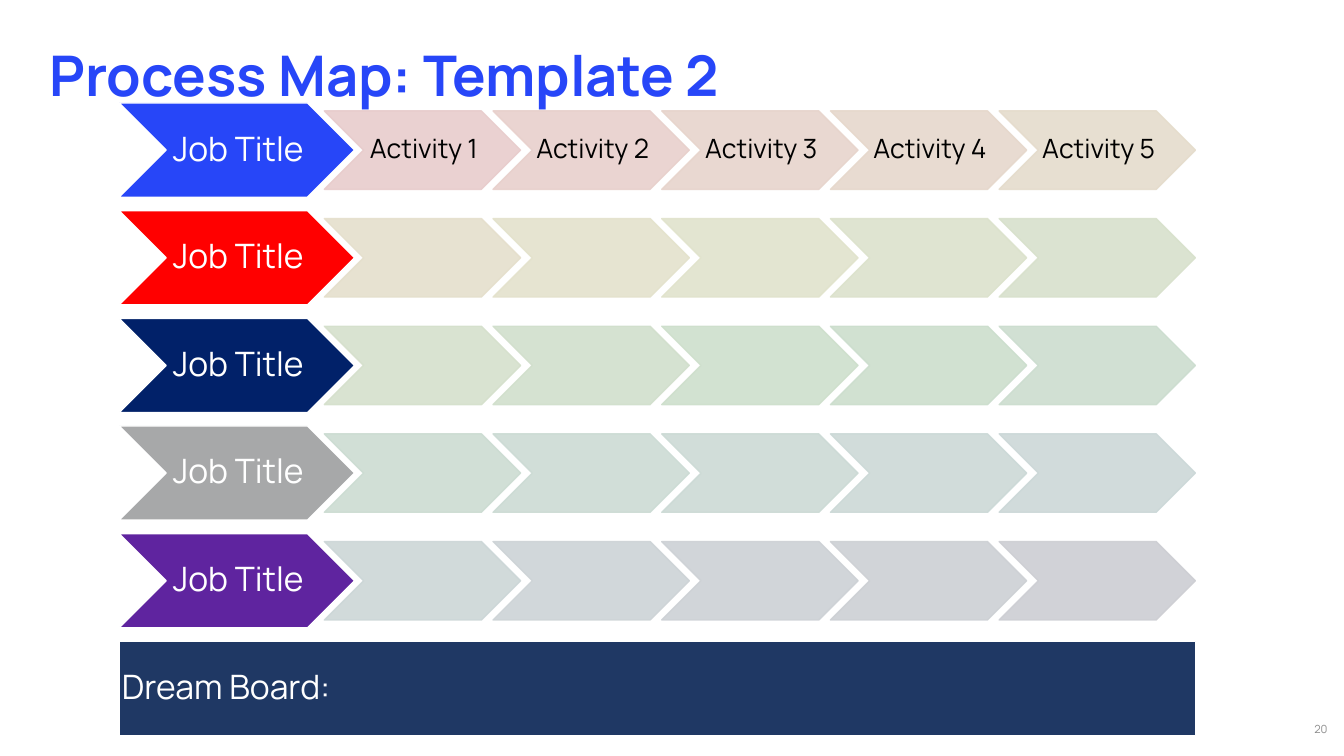
from dataclasses import dataclass
from typing import Optional

from lxml import etree
from pptx import Presentation
from pptx.dml.color import RGBColor
from pptx.enum.shapes import MSO_SHAPE
from pptx.enum.text import MSO_ANCHOR, MSO_AUTO_SIZE, PP_ALIGN
from pptx.oxml.ns import qn
from pptx.util import Pt

CHEVRON, RECTANGLE = MSO_SHAPE.CHEVRON, MSO_SHAPE.RECTANGLE
TOP, MIDDLE = MSO_ANCHOR.TOP, MSO_ANCHOR.MIDDLE
LEFT, CENTER, RIGHT = PP_ALIGN.LEFT, PP_ALIGN.CENTER, PP_ALIGN.RIGHT
NO_AUTO_SIZE = MSO_AUTO_SIZE.NONE
TITLE_ONLY = 5


@dataclass(frozen=True)
class Theme:
    font: str = "Manrope"
    title: str = "2746F8"
    white: str = "FFFFFF"
    black: str = "000000"
    board: str = "1F3864"
    page_number: str = "8C8C8C"
    title_size: float = 40
    job_size: float = 24
    activity_size: float = 19
    page_number_size: float = 8
    activity_opacity: int = 90


@dataclass(frozen=True)
class Box:
    left: float
    top: float
    width: float
    height: float

    def lengths(self) -> tuple:
        return Pt(self.left), Pt(self.top), Pt(self.width), Pt(self.height)


@dataclass(frozen=True)
class Lane:
    job_color: str
    activity_colors: tuple
    activities: tuple = ()


THEME = Theme()
LANES = (
    Lane("2746F8", ("E8CCCC", "E8D0CC", "E7D4CC", "E6D8CC", "E5DCCC"),
         tuple(f"Activity {number}" for number in range(1, 6))),
    Lane("FF0000", ("E5DFCC", "E4E2CC", "E1E3CC", "DCE2CC", "D8E1CC")),
    Lane("012169", ("D5E0CC", "D1DFCC", "CEDFCC", "CCDECD", "CCDDCF")),
    Lane("A7A8A9", ("CCDCD2", "CCDBD4", "CCDAD5", "CCD9D7", "CCD8D8")),
    Lane("5F249F", ("CCD6D7", "CDD3D6", "CDD1D5", "CDD0D4", "CDCED3")),
)

# Layout grid
GRID_LEFT, GRID_TOP, LANE_PITCH = 85, 73.6, 76.9
JOB_WIDTH, JOB_HEIGHT = 168.3, 67.3
ACTIVITY_LEFT, ACTIVITY_PITCH = 231.7, 120.5
ACTIVITY_WIDTH, ACTIVITY_HEIGHT = 140.2, 56
BOARD_WIDTH = 769


def write_text(frame, text: str, *, size: float, color: str, align=LEFT, anchor=MIDDLE,
               bold: bool = False, line_spacing=1.0, margins: tuple = (0, 0, 0, 0)) -> None:
    frame.word_wrap = True
    frame.auto_size = NO_AUTO_SIZE
    frame.vertical_anchor = anchor
    (frame.margin_left, frame.margin_top,
     frame.margin_right, frame.margin_bottom) = map(Pt, margins)
    paragraph = frame.paragraphs[0]
    paragraph.alignment = align
    paragraph.line_spacing = line_spacing
    run = paragraph.add_run()
    run.text = text
    run.font.name = THEME.font
    run.font.size = Pt(size)
    run.font.bold = bold
    run.font.color.rgb = RGBColor.from_string(color)


def add_block(slide, kind, box: Box, fill: str, line: str, opacity: Optional[int] = None):
    shape = slide.shapes.add_shape(kind, *box.lengths())
    shape.shadow.inherit = False
    shape.fill.solid()
    shape.fill.fore_color.rgb = RGBColor.from_string(fill)
    shape.line.color.rgb = RGBColor.from_string(line)
    shape.line.width = Pt(1)
    if opacity is not None:
        for color in shape.element.spPr.iter(qn("a:srgbClr")):
            etree.SubElement(color, qn("a:alpha")).set("val", str(opacity * 1000))
    return shape


def add_lane(slide, lane: Lane, top: float) -> None:
    # Job title chevron
    job = add_block(slide, CHEVRON, Box(GRID_LEFT, top, JOB_WIDTH, JOB_HEIGHT),
                    lane.job_color, THEME.white)
    write_text(job.text_frame, "Job Title", size=THEME.job_size, color=THEME.white,
               align=CENTER, line_spacing=0.9, margins=(2, 1.2, 0, 1.2))

    # Activity chevrons, centred on the job title
    activity_top = top + (JOB_HEIGHT - ACTIVITY_HEIGHT) / 2
    for column, color in enumerate(lane.activity_colors):
        box = Box(ACTIVITY_LEFT + column * ACTIVITY_PITCH, activity_top,
                  ACTIVITY_WIDTH, ACTIVITY_HEIGHT)
        activity = add_block(slide, CHEVRON, box, color, color, THEME.activity_opacity)
        if lane.activities:
            write_text(activity.text_frame, lane.activities[column],
                       size=THEME.activity_size, color=THEME.black, align=CENTER,
                       line_spacing=0.9, margins=(2, 0.9, 0, 0.9))


def main() -> None:
    presentation = Presentation()
    presentation.slide_width, presentation.slide_height = Pt(960), Pt(540)
    slide = presentation.slides.add_slide(presentation.slide_layouts[TITLE_ONLY])

    # Page number
    page_number = slide.shapes.add_textbox(*Box(906.5, 516.2, 41.8, 9.4).lengths())
    write_text(page_number.text_frame, "20", size=THEME.page_number_size,
               color=THEME.page_number, align=RIGHT)

    # Process lanes
    for row, lane in enumerate(LANES):
        add_lane(slide, lane, GRID_TOP + row * LANE_PITCH)

    # Dream board
    board_top = GRID_TOP + len(LANES) * LANE_PITCH
    board = add_block(slide, RECTANGLE, Box(GRID_LEFT, board_top, BOARD_WIDTH, JOB_HEIGHT),
                      THEME.board, THEME.white)
    write_text(board.text_frame, "Dream Board:", size=THEME.job_size, color=THEME.white,
               line_spacing=0.9, margins=(2, 1.2, 0, 1.2))

    # Title, in front of the lanes
    title = slide.shapes.title
    title.left, title.top, title.width, title.height = Box(35.3, -13, 891.4, 85.7).lengths()
    write_text(title.text_frame, "Process Map: Template 2", size=THEME.title_size,
               color=THEME.title, anchor=TOP, bold=True, line_spacing=Pt(90.2))
    slide.shapes.element.append(title.element)

    presentation.save("out.pptx")


if __name__ == "__main__":
    main()
